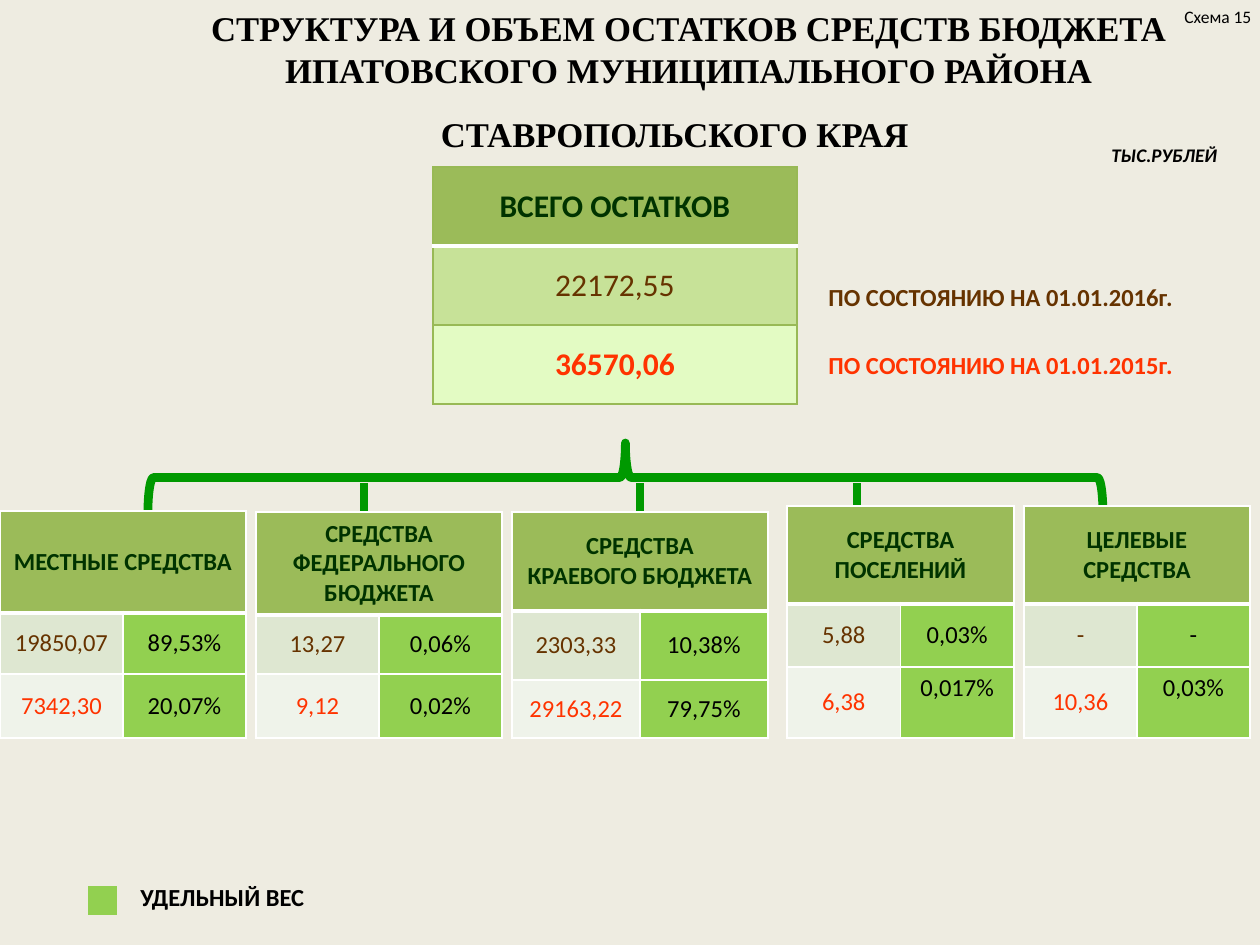
from lxml import etree
from pptx import Presentation
from pptx import util as u
from pptx.dml.color import RGBColor
from pptx.enum import shapes, text
from pptx.oxml.ns import qn

PX = 914400 / 126
GREEN, LIME, HEAD = "009900", "92D050", "9BBB59"
BROWN, RED, DARK, BLACK = "663300", "FF3300", "003300", "000000"
WHITE, EDGE = "FFFFFF", "98B955"

TITLE = [
    "СТРУКТУРА И ОБЪЕМ ОСТАТКОВ СРЕДСТВ БЮДЖЕТА ИПАТОВСКОГО МУНИЦИПАЛЬНОГО РАЙОНА",
    "СТАВРОПОЛЬСКОГО КРАЯ",
]
TOTALS = [
    ("ВСЕГО ОСТАТКОВ", HEAD, DARK, True),
    ("22172,55", "C7E298", BROWN, False),
    ("36570,06", "E3FBC3", RED, True),
]
SOURCES = [
    ((0, 511, 246), (102, 61, 64), "МЕСТНЫЕ СРЕДСТВА",
     [("19850,07", "89,53%"), ("7342,30", "20,07%")], "middle"),
    ((256, 512, 246), (103, 59, 64), "СРЕДСТВА\nФЕДЕРАЛЬНОГО БЮДЖЕТА",
     [("13,27", "0,06%"), ("9,12", "0,02%")], "middle"),
    ((512, 512, 256), (99, 69, 58), "СРЕДСТВА\nКРАЕВОГО БЮДЖЕТА",
     [("2303,33", "10,38%"), ("29163,22", "79,75%")], "middle"),
    ((787, 506, 227), (98, 63, 71), "СРЕДСТВА ПОСЕЛЕНИЙ",
     [("5,88", "0,03%"), ("6,38", "0,017%")], "top"),
    ((1024, 506, 226), (98, 63, 71), "ЦЕЛЕВЫЕ\nСРЕДСТВА",
     [("-", "-"), ("10,36", "0,03%")], "top"),
]
ROW_STYLES = [("DEE7D1", BROWN), ("EFF3EA", RED)]
LABELS = [
    ((816, 276, 384, 43), "ПО СОСТОЯНИЮ НА 01.01.2016г.", dict(size=14, bold=True), BROWN),
    ((816, 344, 374, 43), "ПО СОСТОЯНИЮ НА 01.01.2015г.", dict(size=14, bold=True), RED),
    ((128, 876, 315, 43), "УДЕЛЬНЫЙ ВЕС", dict(size=14, bold=True), BLACK),
    ((1099, 137, 132, 37), "ТЫС.РУБЛЕЙ", dict(size=11, bold=True, italic=True), BLACK),
    ((1172, 0, 108, 34), "Схема 15", dict(size=10), BLACK),
]
STEMS = [364, 640, 857]


def px(*values):
    return [round(v * PX) for v in values]


def rgb(value):
    return RGBColor.from_string(value)


def style(font, color, size, **values):
    values = {"name": "Calibri", "size": u.Pt(size), **values}
    for key, value in values.items():
        setattr(font, key, value)
    font.color.rgb = rgb(color)


def write(tf, content, color, align=None, **values):
    for i, line in enumerate(content.split("\n")):
        p = tf.paragraphs[0] if i == 0 else tf.add_paragraph()
        p.alignment = align
        r = p.add_run()
        r.text = line
        style(r.font, color, **values)


def border(cell, color, width, bottom=None):
    tcPr = cell._tc.get_or_add_tcPr()
    for i, side in enumerate(("lnL", "lnR", "lnT", "lnB")):
        c, w = bottom if bottom and side == "lnB" else (color, width)
        ln = etree.Element(qn("a:" + side), w=str(u.Pt(w)))
        fill = etree.SubElement(ln, qn("a:solidFill"))
        etree.SubElement(fill, qn("a:srgbClr"), val=c)
        tcPr.insert(i, ln)


def fill_cell(cell, content, fill, color, anchor="middle", **values):
    cell.fill.solid()
    cell.fill.fore_color.rgb = rgb(fill)
    cell.vertical_anchor = getattr(text.MSO_ANCHOR, anchor.upper())
    write(cell.text_frame, content, color, text.PP_ALIGN.CENTER, **values)


def add_table(s, place, heights, columns):
    x, y, w = place
    table = s.shapes.add_table(len(heights), columns, *px(x, y, w, sum(heights))).table
    for row, h in zip(table.rows, heights):
        row.height = px(h)[0]
    for column in table.columns:
        column.width = px(w / columns)[0]
    return table


def add_title(s):
    sp = s.shapes.title
    sp.left, sp.top, sp.width, sp.height = px(88, 0, 1201, 147)
    tf = sp.text_frame
    tf.auto_size = text.MSO_AUTO_SIZE.NONE
    tf.word_wrap = True
    tf.vertical_anchor = text.MSO_ANCHOR.TOP
    write(tf, "\n".join(TITLE), BLACK, text.PP_ALIGN.CENTER,
          size=19.8, name="Times New Roman", bold=True)
    for p in tf.paragraphs:
        p.line_spacing = u.Pt(24)
        p.space_before = u.Pt(0)
    p.space_before = u.Pt(12.5)
    p._p.get_or_add_pPr().set("marR", str(px(28)[0]))


def add_totals(s):
    table = add_table(s, (433, 167, 364), [79] * 3, 1)
    for i, (content, fill, color, bold) in enumerate(TOTALS):
        cell = table.cell(i, 0)
        fill_cell(cell, content, fill, color, size=18, bold=bold)
        border(cell, EDGE, 0.75, (WHITE, 2) if i == 0 else None)


def add_source(s, place, heights, heading, rows, last_anchor):
    table = add_table(s, place, heights, 2)
    table.cell(0, 0).merge(table.cell(0, 1))
    fill_cell(table.cell(0, 0), heading, HEAD, DARK, size=14, bold=True)
    for i, ((amount, share), (fill, color)) in enumerate(zip(rows, ROW_STYLES), 1):
        anchor = last_anchor if i == len(rows) else "middle"
        fill_cell(table.cell(i, 0), amount, fill, color, size=14, bold=False)
        fill_cell(table.cell(i, 1), share, LIME, BLACK, anchor, size=14, bold=False)
    for i in range(len(heights)):
        for j in range(2):
            border(table.cell(i, j), WHITE, 1, (WHITE, 3) if i == 0 else None)


def add_bracket(s):
    sp = s.shapes.add_shape(shapes.MSO_SHAPE.RIGHT_BRACE, *px(591, 0, 69, 955))
    sp.rotation = 270
    sp.adjustments[0], sp.adjustments[1] = 0.08, 0.5
    sp.shadow.inherit = False
    sp.fill.background()
    stems = [s.shapes.add_connector(shapes.MSO_CONNECTOR.STRAIGHT, *px(x, 483, x, 512))
             for x in STEMS]
    for stem in stems:
        etree.SubElement(stem._element.spPr, qn("a:effectLst"))
    for shape in [sp, *stems]:
        shape.line.color.rgb = rgb(GREEN)
        shape.line.width = u.Pt(5)


def add_labels(s):
    for place, content, values, color in LABELS:
        tf = s.shapes.add_textbox(*px(*place)).text_frame
        tf.word_wrap = True
        write(tf, content, color, **values)
    key = s.shapes.add_shape(shapes.MSO_SHAPE.RECTANGLE, *px(88, 886, 29, 29))
    key.shadow.inherit = False
    key.fill.solid()
    key.fill.fore_color.rgb = rgb(LIME)
    key.line.fill.background()


def main():
    prs = Presentation()
    prs.slide_width, prs.slide_height = px(1260, 945)
    s = prs.slides.add_slide(prs.slide_layouts[5])
    s.background.fill.solid()
    s.background.fill.fore_color.rgb = rgb("EEECE1")
    add_title(s)
    add_totals(s)
    add_bracket(s)
    for source in SOURCES:
        add_source(s, *source)
    add_labels(s)
    prs.save("out.pptx")


if __name__ == "__main__":
    main()
